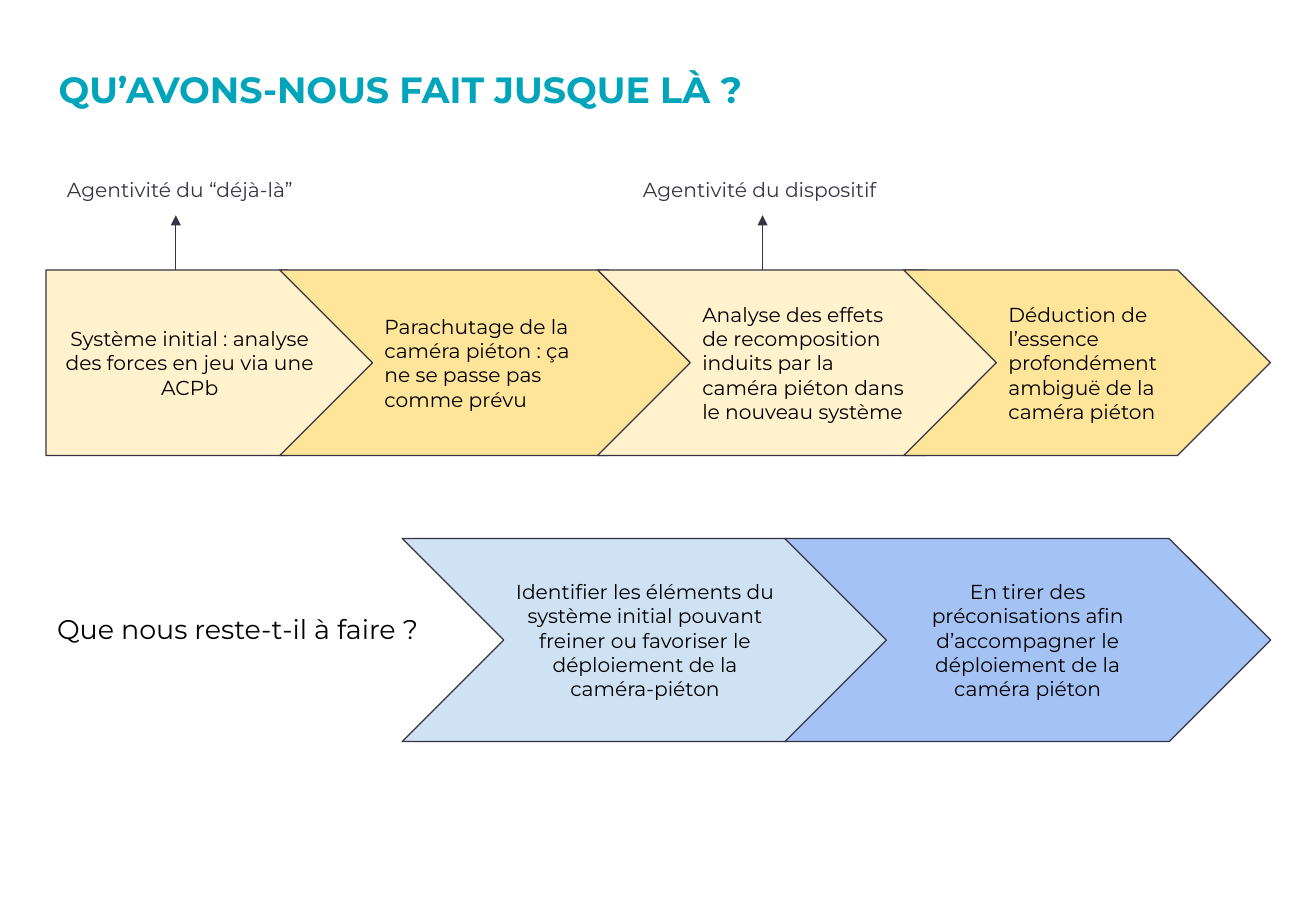
from lxml import etree
from pptx import Presentation
from pptx.dml.color import RGBColor
from pptx.enum.shapes import MSO_CONNECTOR, MSO_SHAPE
from pptx.enum.text import MSO_ANCHOR, MSO_AUTO_SIZE, PP_ALIGN
from pptx.oxml.ns import qn
from pptx.util import Pt

TEAL = RGBColor(0x00, 0xA4, 0xBB)
SLATE = RGBColor(0x37, 0x35, 0x45)
BLACK = RGBColor(0x00, 0x00, 0x00)
CREAM = RGBColor(0xFF, 0xF2, 0xCC)
YELLOW = RGBColor(0xFF, 0xE5, 0x99)
PALE_BLUE = RGBColor(0xCF, 0xE2, 0xF3)
BLUE = RGBColor(0xA4, 0xC2, 0xF4)


class SlideBuilder:
    font_name = "Montserrat"
    body_size = 12
    inset = 7.2
    line_width = 0.75

    def __init__(self, slide):
        self.slide = slide

    def fill_text(self, shape, text, size, color, align=PP_ALIGN.LEFT,
                  anchor=MSO_ANCHOR.TOP, bold=False):
        frame = shape.text_frame
        frame.text = text
        frame.word_wrap = True
        frame.auto_size = MSO_AUTO_SIZE.NONE
        frame.vertical_anchor = anchor
        frame.margin_left = frame.margin_right = Pt(self.inset)
        frame.margin_top = frame.margin_bottom = Pt(self.inset)
        para = frame.paragraphs[0]
        para.alignment = align
        font = para.runs[0].font
        font.name = self.font_name
        font.size = Pt(size)
        font.bold = bold
        font.color.rgb = color
        return para

    def title(self, text, left, top, width, height):
        box = self.slide.shapes.title
        box.left, box.top = Pt(left), Pt(top)
        box.width, box.height = Pt(width), Pt(height)
        para = self.fill_text(box, text, 21.6, TEAL, bold=True)
        para.line_spacing = 1.28

    def label(self, text, left, top, width, height, size=body_size, color=SLATE):
        box = self.slide.shapes.add_textbox(Pt(left), Pt(top), Pt(width), Pt(height))
        self.fill_text(box, text, size, color)

    def step(self, kind, text, left, top, width, height, fill, align):
        shape = self.slide.shapes.add_shape(
            kind, Pt(left), Pt(top), Pt(width), Pt(height))
        shape.adjustments[0] = 0.5
        shape.shadow.inherit = False
        shape.fill.solid()
        shape.fill.fore_color.rgb = fill
        shape.line.color.rgb = SLATE
        shape.line.width = Pt(self.line_width)
        self.fill_text(shape, text, self.body_size, BLACK, align, MSO_ANCHOR.MIDDLE)

    def up_arrow(self, x, bottom, top):
        arrow = self.slide.shapes.add_connector(
            MSO_CONNECTOR.STRAIGHT, Pt(x), Pt(bottom), Pt(x), Pt(top))
        arrow.line.color.rgb = SLATE
        arrow.line.width = Pt(self.line_width)
        properties = arrow._element.spPr
        etree.SubElement(properties.find(qn("a:ln")), qn("a:tailEnd"), type="triangle")
        etree.SubElement(properties, qn("a:effectLst"))


def main():
    deck = Presentation()
    deck.slide_width, deck.slide_height = Pt(780), Pt(540)
    page = SlideBuilder(deck.slides.add_slide(deck.slide_layouts[5]))

    page.title("QU’AVONS-NOUS FAIT JUSQUE LÀ ?", 27.5, 25.2, 546.5, 49)

    # Steps already done
    done_top, done_height = 160, 110
    pentagon, chevron = MSO_SHAPE.PENTAGON, MSO_SHAPE.CHEVRON
    done_steps = [
        (pentagon, "Système initial : analyse des forces en jeu via une ACPb",
         27.2, 198, CREAM, PP_ALIGN.CENTER),
        (chevron, "Parachutage de la caméra piéton : ça ne se passe pas comme prévu",
         165.8, 249.8, YELLOW, PP_ALIGN.LEFT),
        (chevron, "Analyse des effets de recomposition induits par la caméra piéton "
         "dans le nouveau système", 354.2, 249.8, CREAM, PP_ALIGN.LEFT),
        (chevron, "Déduction de l’essence profondément ambiguë de la caméra piéton",
         535.6, 217.4, YELLOW, PP_ALIGN.LEFT),
    ]
    for kind, text, left, width, fill, align in done_steps:
        page.step(kind, text, left, done_top, width, done_height, fill, align)

    # Steps still to do
    next_steps = [
        ("Identifier les éléments du système initial pouvant freiner ou favoriser "
         "le déploiement de la caméra-piéton", PALE_BLUE),
        ("En tirer des préconisations afin d’accompagner le déploiement "
         "de la caméra piéton", BLUE),
    ]
    for index, (text, fill) in enumerate(next_steps):
        page.step(chevron, text, 238.4 + index * 226.8, 319.2, 288, 120.4,
                  fill, PP_ALIGN.CENTER)
    page.label("Que nous reste-t-il à faire ?", 26.8, 355.7, 255.6, 35.3, 16, BLACK)

    # Agency notes above the first row
    agency_notes = [
        ("Agentivité du “déjà-là”", 32.6, 163.4, 104.2),
        ("Agentivité du dispositif", 374, 156.2, 452),
    ]
    for text, left, width, arrow_x in agency_notes:
        page.up_arrow(arrow_x, done_top, 127.6)
        page.label(text, left, 98, width, 24)

    deck.save("out.pptx")


if __name__ == "__main__":
    main()
